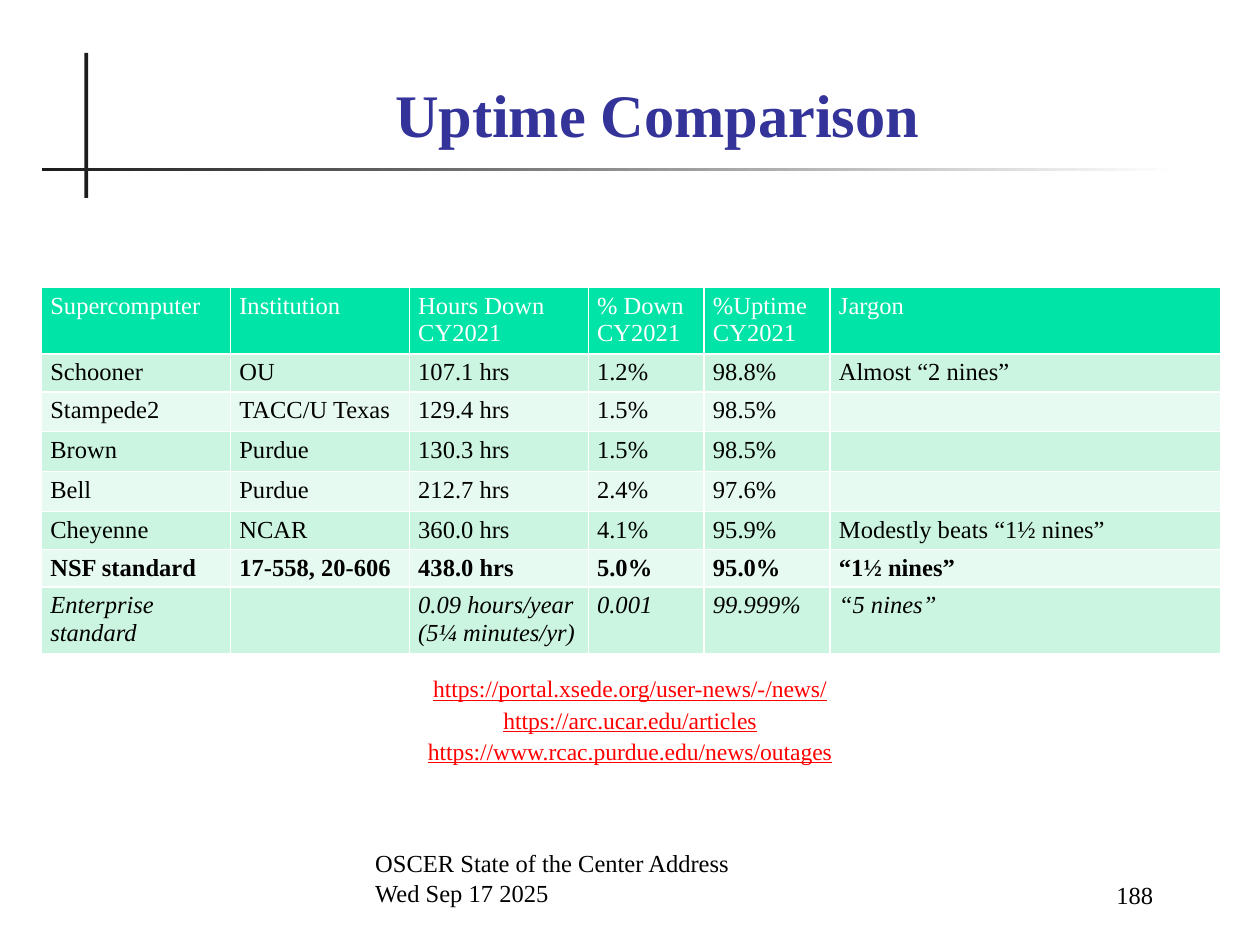
from typing import NamedTuple

from lxml import etree
from pptx import Presentation
from pptx.dml.color import RGBColor
from pptx.enum.shapes import MSO_SHAPE
from pptx.enum.text import MSO_ANCHOR, PP_ALIGN
from pptx.oxml.ns import qn
from pptx.util import Inches, Pt

LEFT, CENTER, RIGHT = PP_ALIGN.LEFT, PP_ALIGN.CENTER, PP_ALIGN.RIGHT
TOP, BOTTOM = MSO_ANCHOR.TOP, MSO_ANCHOR.BOTTOM
RECTANGLE = MSO_SHAPE.RECTANGLE

FONT = "Times New Roman"
BLACK, WHITE, DARK = "000000", "FFFFFF", "1C1C1C"
TITLE_BLUE, LINK_RED = "333399", "FF0000"
HEADER_GREEN, BAND_COLORS = "00E4A8", ("CCF5E1", "E7FAF1")


class Box(NamedTuple):
    left: float
    top: float
    width: float
    height: float

    def lengths(self) -> list:
        return [Inches(value) for value in self]


class UptimeRow(NamedTuple):
    supercomputer: str
    institution: str
    hours_down: str
    percent_down: str
    uptime: str
    jargon: str = ""


HEADER = UptimeRow("Supercomputer", "Institution", "Hours Down CY2021",
                   "% Down CY2021", "%Uptime CY2021", "Jargon")
SYSTEMS = [
    UptimeRow("Schooner", "OU", "107.1 hrs", "1.2%", "98.8%", "Almost “2 nines”"),
    UptimeRow("Stampede2", "TACC/U Texas", "129.4 hrs", "1.5%", "98.5%"),
    UptimeRow("Brown", "Purdue", "130.3 hrs", "1.5%", "98.5%"),
    UptimeRow("Bell", "Purdue", "212.7 hrs", "2.4%", "97.6%"),
    UptimeRow("Cheyenne", "NCAR", "360.0 hrs", "4.1%", "95.9%",
              "Modestly beats “1½ nines”"),
]
NSF_STANDARD = UptimeRow("NSF standard", "17-558, 20-606", "438.0 hrs",
                         "5.0%", "95.0%", "“1½ nines”")
ENTERPRISE_STANDARD = UptimeRow("Enterprise standard", "",
                                "0.09 hours/year\n(5¼ minutes/yr)",
                                "0.001", "99.999%", "“5 nines”")
COLUMN_WIDTHS = (1.5, 1.42, 1.42, 0.92, 1, 3.1)
TALL_ROW, SHORT_ROW = 0.53, 0.3
SOURCES = """https://portal.xsede.org/user-news/-/news/
https://arc.ucar.edu/articles
https://www.rcac.purdue.edu/news/outages"""


def rgb(color: str) -> RGBColor:
    return RGBColor.from_string(color)


def write_text(frame, text: str, *, size: float = 14, color: str = BLACK,
               bold: bool = False, italic: bool = False, underline: bool = False,
               align=LEFT, spacing: float = 1.0) -> None:
    """Write one paragraph per line of text."""
    for index, line in enumerate(text.split("\n")):
        paragraph = frame.add_paragraph() if index else frame.paragraphs[0]
        paragraph.alignment = align
        paragraph.line_spacing = spacing
        if not line:
            # An empty cell still needs its size to keep the row height
            etree.SubElement(paragraph._p, qn("a:endParaRPr"), sz=str(int(size * 100)))
            continue
        run = paragraph.add_run()
        run.text = line
        font = run.font
        font.name, font.size = FONT, Pt(size)
        font.bold, font.italic, font.underline = bold, italic, underline
        font.color.rgb = rgb(color)


def add_text(slide, box: Box, text: str, anchor=TOP, **text_format) -> None:
    frame = slide.shapes.add_textbox(*box.lengths()).text_frame
    frame.word_wrap = True
    frame.vertical_anchor = anchor
    write_text(frame, text, **text_format)


def add_rule(slide, box: Box, end_color: str = DARK) -> None:
    """Draw a thin bar that fades from dark to end_color."""
    rule = slide.shapes.add_shape(RECTANGLE, *box.lengths())
    rule.shadow.inherit = False
    rule.line.fill.background()
    if end_color == DARK:
        rule.fill.solid()
        rule.fill.fore_color.rgb = rgb(DARK)
        return
    rule.fill.gradient()
    rule.fill.gradient_angle = 0
    for stop, color in zip(rule.fill.gradient_stops, (DARK, end_color)):
        stop.color.rgb = rgb(color)


def fill_row(row, values: UptimeRow, fill: str, **text_format) -> None:
    for cell, value in zip(row.cells, values):
        cell.fill.solid()
        cell.fill.fore_color.rgb = rgb(fill)
        cell.margin_left = cell.margin_right = Inches(0.07)
        cell.margin_top = cell.margin_bottom = Inches(0.04)
        write_text(cell.text_frame, value, **text_format)


def add_uptime_table(slide, box: Box) -> None:
    body = [(system, {}) for system in SYSTEMS]
    body += [(NSF_STANDARD, {"bold": True}), (ENTERPRISE_STANDARD, {"italic": True})]
    table = slide.shapes.add_table(len(body) + 1, len(HEADER), *box.lengths()).table
    for column, width in zip(table.columns, COLUMN_WIDTHS):
        column.width = Inches(width)
    for row in table.rows:
        row.height = Inches(SHORT_ROW)
    table.rows[0].height = table.rows[len(body)].height = Inches(TALL_ROW)

    fill_row(table.rows[0], HEADER, HEADER_GREEN, color=WHITE)
    for index, (values, text_format) in enumerate(body):
        fill_row(table.rows[index + 1], values, BAND_COLORS[index % 2], **text_format)


def main() -> None:
    presentation = Presentation()
    presentation.slide_width, presentation.slide_height = Inches(10), Inches(7.5)
    slide = presentation.slides.add_slide(presentation.slide_layouts[5])

    # Crossed rules behind the title
    add_rule(slide, Box(0.67, 0.42, 0.03, 1.15))
    add_rule(slide, Box(0.33, 1.33, 9, 0.03), end_color=WHITE)

    # Title
    title = slide.shapes.title
    title.left, title.top, title.width, title.height = Box(0.83, 0.5, 8.77, 0.74).lengths()
    title.text_frame.vertical_anchor = BOTTOM
    write_text(title.text_frame, "Uptime Comparison", size=34.5, color=TITLE_BLUE,
               bold=True, align=CENTER)

    # Comparison and its sources
    add_uptime_table(slide, Box(0.33, 2.28, 9.35, 2.93))
    add_text(slide, Box(3.21, 5.28, 3.58, 1.15), SOURCES, size=13.5, color=LINK_RED,
             underline=True, align=CENTER, spacing=1.1)

    # Footer and slide number
    add_text(slide, Box(2.88, 6.75, 4.37, 0.5),
             "OSCER State of the Center Address\nWed Sep 17 2025", anchor=BOTTOM)
    add_text(slide, Box(7.83, 6.77, 1.42, 0.5), "188", anchor=BOTTOM, align=RIGHT)

    presentation.save("out.pptx")


if __name__ == "__main__":
    main()
